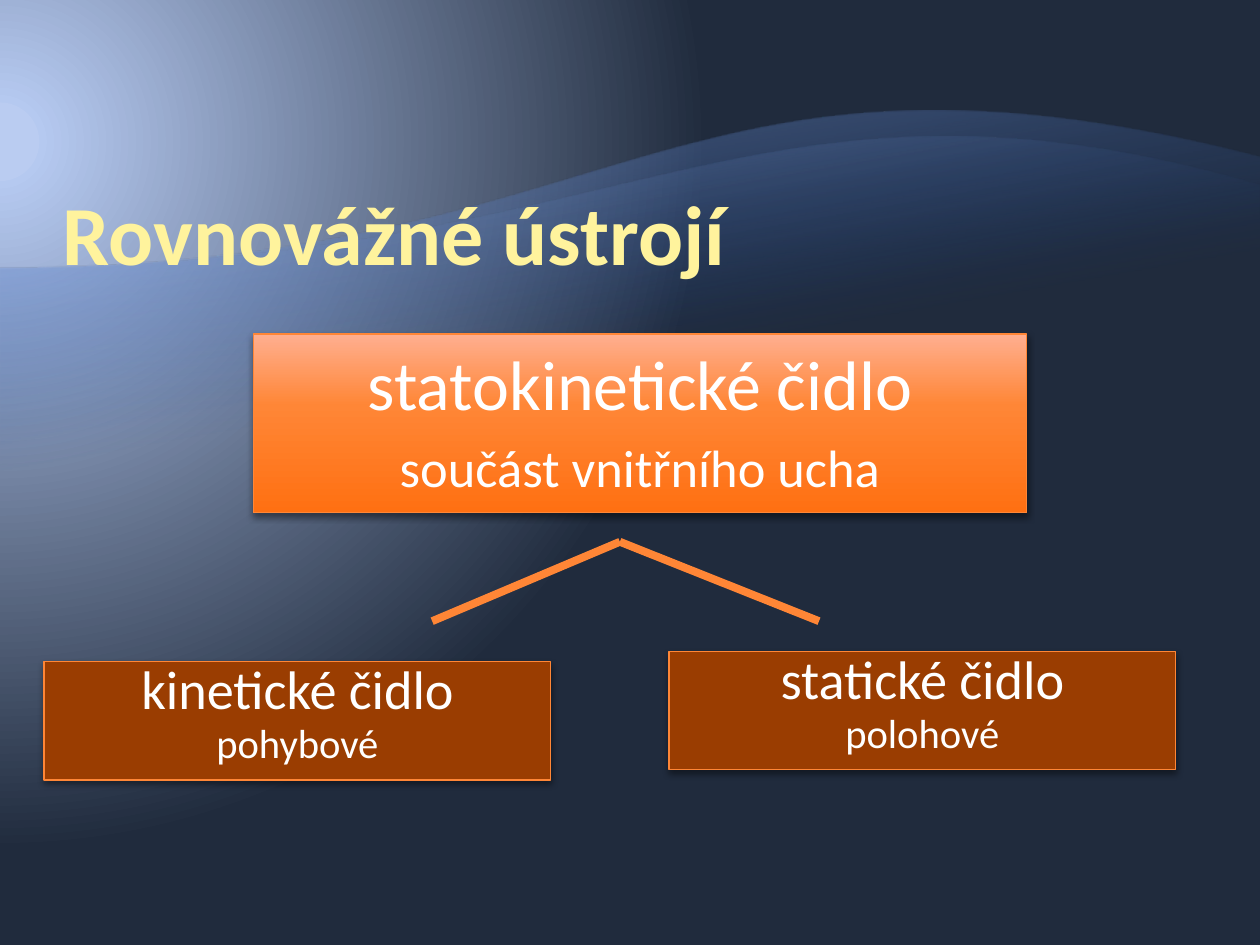
from dataclasses import dataclass

import lxml.etree
import pptx
import pptx.dml.color
import pptx.enum.shapes
import pptx.enum.text
import pptx.oxml.ns
import pptx.util
from pptx.util import Inches

COLOURS = {
    "title": "FFF39D",
    "text": "FFFFFF",
    "orange": "FF8636",
    "deep orange": "FF7012",
    "pale orange": "FFAF90",
    "brown": "9A3D01",
    "glow": "BACCF1",
    "glow edge": "B5C9F0",
    "night": "202B3D",
    "wave": "2050A4",
    "back wave": "91AFED",
    "front wave": "B4C8F2",
    "shadow": "000000",
}
FONT = "Calibri"
CURVE_STEPS = 60
Point = tuple[float, float]


@dataclass
class Stop:
    position: int
    colour: str
    opacity: int = 100


@dataclass
class Wave:
    curve: tuple[Point, Point, Point, Point]
    bottom: float
    crest: Stop


@dataclass
class Line:
    text: str
    size: float


@dataclass
class Box:
    left: float
    top: float
    width: float
    height: float
    lines: list[Line]
    spacing: float = 1.0


WAVES = [
    Wave(((0, 2.13), (5, 2.13), (5.34, 0.05), (10, 1.25)), 7.33, Stop(0, "back wave", 55)),
    Wave(((0, 2.13), (5, 2.13), (5.98, 0.31), (10, 1.47)), 6.37, Stop(0, "front wave", 30)),
]
MAIN_BOX = Box(2.01, 2.65, 6.14, 1.42,
               [Line("statokinetické čidlo", 40), Line("součást vnitřního ucha", 30)])
BRANCH_BOXES = [
    Box(0.35, 5.25, 4.02, 0.94, [Line("kinetické čidlo", 31), Line("pohybové", 23.2)], 0.8),
    Box(5.31, 5.17, 4.02, 0.94, [Line("statické čidlo", 31), Line("polohové", 23.2)], 0.8),
]
FORK: Point = (4.92, 4.3)
BRANCH_ENDS: list[Point] = [(3.43, 4.93), (6.5, 4.93)]


def rgb(name: str) -> pptx.dml.color.RGBColor:
    return pptx.dml.color.RGBColor.from_string(COLOURS[name])


def add_element(parent, tag: str, **attributes):
    element = lxml.etree.SubElement(parent, pptx.oxml.ns.qn(tag))
    for name, value in attributes.items():
        element.set(name, str(value))
    return element


def add_colour(parent, name: str, opacity: int = 100) -> None:
    colour = add_element(parent, "a:srgbClr", val=COLOURS[name])
    if opacity < 100:
        add_element(colour, "a:alpha", val=opacity * 1000)


def set_gradient(fill, parent, stops: list[Stop], angle: int | None = None):
    """Fill with a gradient; without an angle the caller adds its direction."""
    fill.solid()
    solid = parent.find(pptx.oxml.ns.qn("a:solidFill"))
    gradient = lxml.etree.Element(pptx.oxml.ns.qn("a:gradFill"), rotWithShape="1")
    parent.replace(solid, gradient)
    stop_list = add_element(gradient, "a:gsLst")
    for stop in stops:
        add_colour(add_element(stop_list, "a:gs", pos=stop.position * 1000),
                   stop.colour, stop.opacity)
    if angle is not None:
        add_element(gradient, "a:lin", ang=angle * 60000, scaled=0)
    return gradient


def set_background(page) -> None:
    fill = page.background.fill
    fill.solid()
    properties = page.element.find(".//" + pptx.oxml.ns.qn("p:bgPr"))
    gradient = set_gradient(fill, properties, [
        Stop(5, "glow"), Stop(5, "glow edge"), Stop(90, "night")])
    circle = add_element(gradient, "a:path", path="circle")
    add_element(circle, "a:fillToRect", l=20000, t=30000, r=135000, b=100000)


def curve_point(curve: tuple[Point, Point, Point, Point], t: float) -> Point:
    weights = ((1 - t) ** 3, 3 * t * (1 - t) ** 2, 3 * t ** 2 * (1 - t), t ** 3)
    x, y = (sum(w * p[axis] for w, p in zip(weights, curve)) for axis in (0, 1))
    return x, y


def add_wave(page, wave: Wave) -> None:
    points = [curve_point(wave.curve, step / CURVE_STEPS) for step in range(CURVE_STEPS + 1)]
    points += [(10, wave.bottom), (0, wave.bottom)]
    corners = [(Inches(x), Inches(y)) for x, y in points]
    builder = page.shapes.build_freeform(*corners[0])
    builder.add_line_segments(corners[1:], close=True)
    shape = builder.convert_to_shape()
    shape.shadow.inherit = False
    shape.line.fill.background()
    set_gradient(shape.fill, shape.element.spPr, [wave.crest, Stop(35, "wave", 0)], 80)


def add_run(para, text: str, size: float, colour: str, bold: bool = False) -> None:
    run = para.add_run()
    run.text = text
    run.font.name = FONT
    run.font.size = pptx.util.Pt(size)
    run.font.bold = bold
    run.font.color.rgb = rgb(colour)


def add_title(page, text: str) -> None:
    frame = page.shapes.add_textbox(Inches(0.5), Inches(0.58), Inches(9), Inches(1.67)).text_frame
    frame.word_wrap = True
    frame.vertical_anchor = pptx.enum.text.MSO_ANCHOR.BOTTOM
    frame.margin_left = frame.margin_right = 0
    frame.margin_top = frame.margin_bottom = Inches(0.01)
    add_run(frame.paragraphs[0], text, 48, "title", bold=True)


def add_box(page, box: Box):
    shape = page.shapes.add_shape(
        pptx.enum.shapes.MSO_SHAPE.RECTANGLE,
        Inches(box.left), Inches(box.top), Inches(box.width), Inches(box.height))
    shape.fill.solid()
    shape.fill.fore_color.rgb = rgb("brown")
    shape.line.color.rgb = rgb("orange")
    shape.line.width = pptx.util.Pt(0.75)
    # Soft shadow straight below
    shape.shadow.inherit = False
    effects = shape.element.spPr.find(pptx.oxml.ns.qn("a:effectLst"))
    shadow = add_element(effects, "a:outerShdw", blurRad=pptx.util.Pt(4), dist=pptx.util.Pt(2),
                         dir=90 * 60000, rotWithShape=0)
    add_colour(shadow, "shadow", 43)
    # Centred lines from the top
    frame = shape.text_frame
    frame.word_wrap = True
    frame.vertical_anchor = pptx.enum.text.MSO_ANCHOR.TOP
    for index, line in enumerate(box.lines):
        para = frame.add_paragraph() if index else frame.paragraphs[0]
        para.alignment = pptx.enum.text.PP_ALIGN.CENTER
        para.line_spacing = box.spacing
        para.space_before = pptx.util.Pt(round(line.size * 0.2, 1))
        add_run(para, line.text, line.size, "text")
    return shape


def add_branch(page, start: Point, end: Point) -> None:
    branch = page.shapes.add_connector(
        pptx.enum.shapes.MSO_CONNECTOR.STRAIGHT, *(Inches(value) for value in start + end))
    branch.line.color.rgb = rgb("orange")
    branch.line.width = pptx.util.Pt(4.5)
    add_element(branch.element.spPr, "a:effectLst")


def main() -> None:
    deck = pptx.Presentation()
    deck.slide_width, deck.slide_height = Inches(10), Inches(7.5)
    page = deck.slides.add_slide(deck.slide_layouts[6])
    # Backdrop
    set_background(page)
    for wave in WAVES:
        add_wave(page, wave)
    # Title and main box
    add_title(page, "Rovnovážné ústrojí")
    main_box = add_box(page, MAIN_BOX)
    set_gradient(main_box.fill, main_box.element.spPr, [
        Stop(0, "deep orange"), Stop(60, "orange"), Stop(100, "pale orange")], 270)
    # Two branches
    for end, box in zip(BRANCH_ENDS, BRANCH_BOXES):
        add_branch(page, FORK, end)
        add_box(page, box)
    deck.save("out.pptx")


if __name__ == "__main__":
    main()
